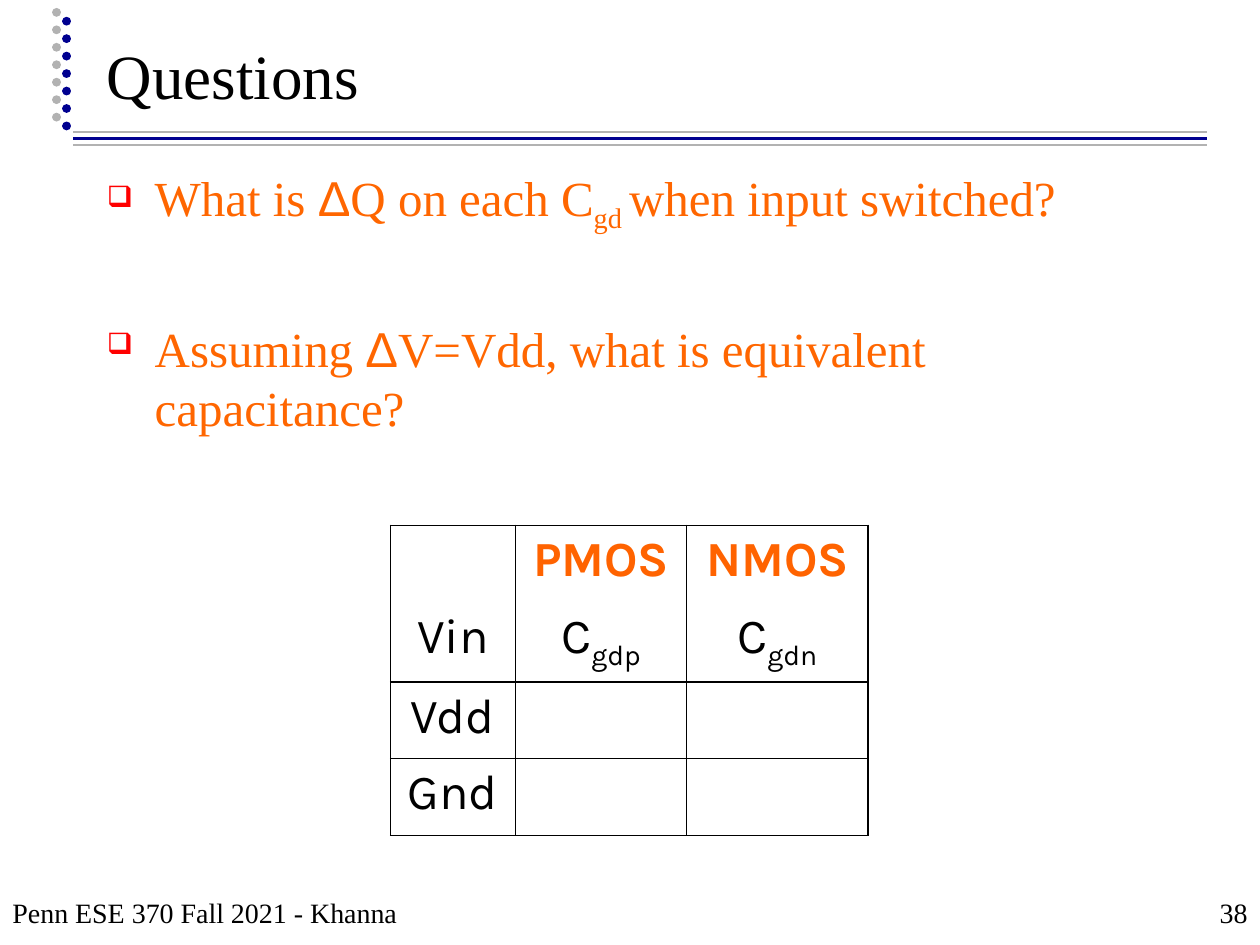
from dataclasses import dataclass

from lxml.etree import SubElement
from pptx import Presentation
from pptx.dml.color import RGBColor
from pptx.enum.dml import MSO_LINE
from pptx.enum.shapes import MSO_CONNECTOR
from pptx.enum.text import MSO_ANCHOR, PP_ALIGN
from pptx.oxml.ns import qn
from pptx.util import Inches, Pt


@dataclass(frozen=True)
class Theme:
    black: str = "000000"
    white: str = "FFFFFF"
    navy: str = "000090"
    gray: str = "B2B2B2"
    red: str = "FF0000"
    orange: str = "FF6600"
    header: str = "FF6300"
    serif: str = "Times New Roman"
    sans: str = "Arial"
    grid: str = "Karla"
    title_size: int = 36
    body_size: int = 28
    footer_size: int = 16


THEME = Theme()
TITLE = {"name": THEME.serif, "size": Pt(THEME.title_size), "color": THEME.black}
BODY = {"name": THEME.serif, "size": Pt(THEME.body_size), "color": THEME.orange}
SYMBOL = {**BODY, "name": THEME.sans}
FOOTER = {**TITLE, "size": Pt(THEME.footer_size)}
CELL = {"name": THEME.grid, "size": Pt(THEME.body_size), "color": THEME.black, "bold": False}
HEADER = {**CELL, "color": THEME.header, "bold": True}
SUBSCRIPT = {"baseline": "-25000"}


def add_span(para, text, style):
    span = para.add_run()
    span.text = text
    for key, value in style.items():
        if key == "color":
            span.font.color.rgb = RGBColor.from_string(value)
        elif key == "baseline":
            span._r.get_or_add_rPr().set(key, value)
        else:
            setattr(span.font, key, value)


def add_box(page, left, top, width, height, anchor=MSO_ANCHOR.TOP):
    box = page.shapes.add_textbox(Inches(left), Inches(top), Inches(width), Inches(height))
    box.text_frame.word_wrap = True
    box.text_frame.vertical_anchor = anchor
    return box.text_frame


def add_label(page, area, text, style, align=PP_ALIGN.LEFT):
    para = add_box(page, *area, anchor=MSO_ANCHOR.BOTTOM).paragraphs[0]
    para.alignment = align
    add_span(para, text, style)


def add_rule(page, start, end, color, width, dotted=False):
    rule = page.shapes.add_connector(MSO_CONNECTOR.STRAIGHT, *map(Inches, start + end))
    rule.line.color.rgb = RGBColor.from_string(color)
    rule.line.width = Pt(width)
    if dotted:
        rule.line.dash_style = MSO_LINE.ROUND_DOT
        rule.line._ln.set("cap", "rnd")
    SubElement(rule._element.spPr, qn("a:effectLst"))


def add_decoration(page, left, top, width, height):
    """Triple rule under the title and two dotted columns beside it."""
    middle = top + height
    for offset, color, weight in ((0, THEME.navy, 2), (0.05, THEME.gray, 1), (-0.05, THEME.gray, 1)):
        add_rule(page, (left + 0.13, middle + offset), (left + width, middle + offset), color, weight)
    for x, y, color in ((0, 0, THEME.gray), (0.08, 0.07, THEME.navy)):
        add_rule(page, (left + x, top + y + 0.92), (left + x, top + y), color, 5, dotted=True)


def add_bullet(para):
    properties = para._p.get_or_add_pPr()
    properties.set("marL", str(Inches(0.38)))
    properties.set("indent", str(Inches(-0.38)))
    color = SubElement(properties, qn("a:buClr"))
    SubElement(color, qn("a:srgbClr")).set("val", THEME.red)
    SubElement(properties, qn("a:buSzPct")).set("val", "60000")
    SubElement(properties, qn("a:buChar")).set("char", "❑")


def add_questions(page, area):
    questions = (
        (("What is ", BODY), ("Δ", SYMBOL), ("Q on each C", BODY),
         ("gd ", {**BODY, **SUBSCRIPT}), ("when input switched?", BODY)),
        (("Assuming ", BODY), ("Δ", SYMBOL), ("V=Vdd, what is equivalent capacitance?", BODY)),
    )
    frame = add_box(page, *area)
    for index, spans in enumerate(questions):
        para = frame.add_paragraph() if index else frame.paragraphs[0]
        add_bullet(para)
        if index:
            para.space_before = Pt(48)
        for text, style in spans:
            add_span(para, text, style)


def set_borders(cell, sides):
    properties = cell._tc.get_or_add_tcPr()
    for position, side in enumerate("LRTB"):
        line = properties.makeelement(qn(f"a:ln{side}"), {"w": str(Pt(1))})
        if side in sides:
            fill = SubElement(line, qn("a:solidFill"))
            SubElement(fill, qn("a:srgbClr")).set("val", THEME.black)
        else:
            SubElement(line, qn("a:noFill"))
        properties.insert(position, line)


def add_capacitance_table(page, left, top, widths, row_height):
    rows = (
        ((), (("PMOS", HEADER),), (("NMOS", HEADER),)),
        ((("Vin", CELL),),
         *((("C", CELL), (name, {**CELL, **SUBSCRIPT})) for name in ("gdp", "gdn"))),
        ((("Vdd", CELL),), (), ()),
        ((("Gnd", CELL),), (), ()),
    )
    # The two heading rows read as one band, with no line between them
    row_sides = ("LRT", "LRB", "LRTB", "LRTB")
    table = page.shapes.add_table(
        len(rows), len(widths), Inches(left), Inches(top),
        Inches(sum(widths)), Inches(row_height * len(rows))).table
    table.first_row = table.horz_banding = False
    for column, width in zip(table.columns, widths):
        column.width = Inches(width)
    for row, contents, sides in zip(table.rows, rows, row_sides):
        row.height = Inches(row_height)
        for cell, spans in zip(row.cells, contents):
            cell.fill.solid()
            cell.fill.fore_color.rgb = RGBColor.from_string(THEME.white)
            set_borders(cell, sides)
            para = cell.text_frame.paragraphs[0]
            para.alignment = PP_ALIGN.CENTER
            for text, style in spans:
                add_span(para, text, style)


def add_footer(page, left, top, width, height):
    number_width = 2.08
    add_label(page, (left, top, 5.42, height), "Penn ESE 370 Fall 2021 - Khanna", FOOTER)
    add_label(page, (left + width - number_width, top, number_width, height),
              "38", FOOTER, PP_ALIGN.RIGHT)


def main():
    deck = Presentation()
    deck.slide_width, deck.slide_height = Inches(10), Inches(7.5)
    page = deck.slides.add_slide(deck.slide_layouts[6])
    add_decoration(page, 0.45, 0.01, 9.13, 1.09)
    add_label(page, (0.75, 0.11, 8.52, 0.83), "Questions", TITLE)
    add_questions(page, (0.75, 1.28, 8.5, 5.47))
    add_footer(page, 0, 6.92, 10, 0.5)
    add_capacitance_table(page, 3.1, 4.17, (0.99, 1.36, 1.44), 0.61)
    deck.save("out.pptx")


if __name__ == "__main__":
    main()
